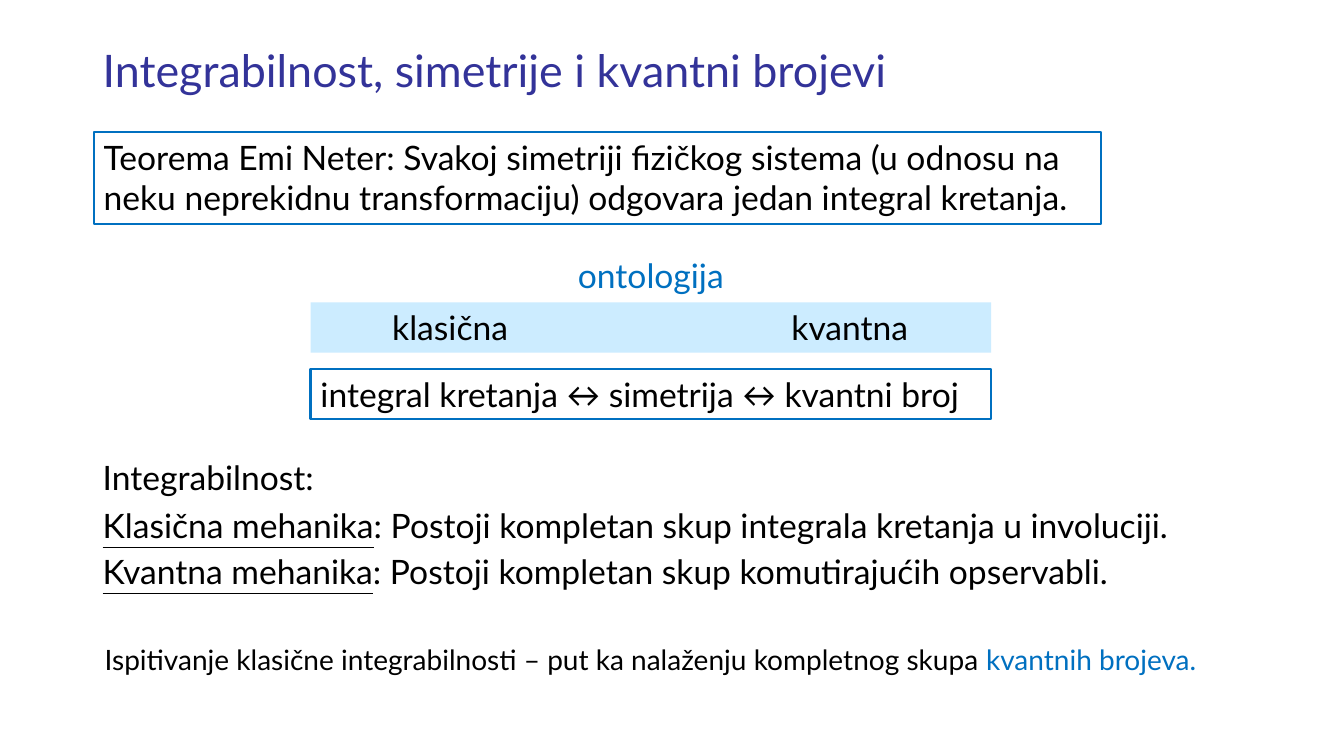
from dataclasses import dataclass

from lxml.etree import SubElement
from pptx import Presentation
from pptx.dml.color import RGBColor
from pptx.enum.shapes import MSO_SHAPE
from pptx.enum.text import MSO_ANCHOR, PP_ALIGN
from pptx.oxml.ns import qn
from pptx.util import Inches, Pt


@dataclass(frozen=True)
class Theme:
    font: str = "Lato"
    ink: RGBColor = RGBColor(0, 0, 0)
    heading: RGBColor = RGBColor(0x33, 0x33, 0x99)
    accent: RGBColor = RGBColor(0x00, 0x70, 0xC0)
    band: RGBColor = RGBColor(0xCC, 0xEC, 0xFF)
    title_size: int = 32
    body_size: int = 24
    note_size: int = 20
    border: float = 1.5


THEME = Theme()
LINE_HEIGHT = 0.5


def add_run(paragraph, text, size=THEME.body_size, color=THEME.ink, underline=None):
    run = paragraph.add_run()
    run.text = text
    run.font.name = THEME.font
    run.font.size = Pt(size)
    run.font.color.rgb = color
    run.font.underline = underline


def prepare(frame):
    """Set wrapping and anchoring, and return the first paragraph."""
    frame.word_wrap = True
    frame.vertical_anchor = MSO_ANCHOR.TOP
    paragraph = frame.paragraphs[0]
    paragraph.alignment = PP_ALIGN.LEFT
    return paragraph


def add_text_area(slide, left, top, width, height):
    area = slide.shapes.add_textbox(Inches(left), Inches(top), Inches(width), Inches(height))
    return area.text_frame, prepare(area.text_frame)


def add_panel(slide, left, top, width, height, fill=None):
    """Add a filled rectangle, or an outlined one when no fill is given."""
    panel = slide.shapes.add_shape(
        MSO_SHAPE.RECTANGLE, Inches(left), Inches(top), Inches(width), Inches(height))
    panel.shadow.inherit = False
    if fill is None:
        panel.fill.background()
        panel.line.color.rgb = THEME.accent
        panel.line.width = Pt(THEME.border)
    else:
        panel.fill.solid()
        panel.fill.fore_color.rgb = fill
        panel.line.fill.background()
    return panel.text_frame, prepare(panel.text_frame)


def add_title(slide, left, top, width, height):
    _, title = add_text_area(slide, left, top, width, height)
    title.line_spacing = 0.9
    add_run(title, "Integrabilnost, simetrije i kvantni brojevi",
            THEME.title_size, THEME.heading)


def add_theorem(slide, left, top, width, height):
    _, theorem = add_panel(slide, left, top, width, height)
    add_run(theorem, "Teorema Emi Neter: Svakoj simetriji fizičkog sistema (u odnosu na "
                     "neku neprekidnu transformaciju) odgovara jedan integral kretanja.")


def add_ontology(slide, left, top, width):
    """Stack the heading, the band of two worlds and the correspondence."""
    _, heading = add_text_area(slide, left, top, width, LINE_HEIGHT)
    heading.alignment = PP_ALIGN.CENTER
    add_run(heading, "ontologija", color=THEME.accent)

    worlds_frame, worlds = add_panel(slide, left, top + 0.52, width, LINE_HEIGHT, THEME.band)
    worlds_frame.margin_left = Inches(0.81)
    tabs = SubElement(worlds._p.get_or_add_pPr(), qn("a:tabLst"))
    SubElement(tabs, qn("a:tab"), pos=str(Inches(3.96)), algn="l")
    add_run(worlds, "klasična\tkvantna")

    _, correspondence = add_panel(slide, left, top + 1.18, width, LINE_HEIGHT)
    add_run(correspondence, "integral kretanja ↔ simetrija ↔ kvantni broj")


def add_definition(paragraph, term, meaning):
    add_run(paragraph, term, underline=True)
    add_run(paragraph, f": {meaning}")


def add_integrability(slide, left, top, width):
    frame, heading = add_text_area(slide, left, top, width, 0.99)
    heading.space_after = Pt(6)
    add_run(heading, "Integrabilnost:")
    add_definition(frame.add_paragraph(), "Klasična mehanika",
                   "Postoji kompletan skup integrala kretanja u involuciji.")
    _, quantum = add_text_area(slide, left, top + 0.94, width, LINE_HEIGHT)
    add_definition(quantum, "Kvantna mehanika",
                   "Postoji kompletan skup komutirajućih opservabli.")


def add_conclusion(slide, left, top, width, height):
    _, conclusion = add_text_area(slide, left, top, width, height)
    add_run(conclusion, "Ispitivanje klasične integrabilnosti – put ka nalaženju "
                        "kompletnog skupa ", THEME.note_size)
    add_run(conclusion, "kvantnih brojeva.", THEME.note_size, THEME.accent)


def main():
    deck = Presentation()
    deck.slide_width, deck.slide_height = Inches(13.33), Inches(7.5)
    slide = deck.slides.add_slide(deck.slide_layouts[6])
    add_title(slide, 0.92, 0.43, 11.5, 0.72)
    add_theorem(slide, 0.93, 1.31, 9.99, 0.91)
    add_ontology(slide, 3.08, 2.48, 6.75)
    add_integrability(slide, 0.92, 4.48, 11.5)
    add_conclusion(slide, 0.94, 6.33, 11.31, 0.44)
    deck.save("out.pptx")


if __name__ == "__main__":
    main()
